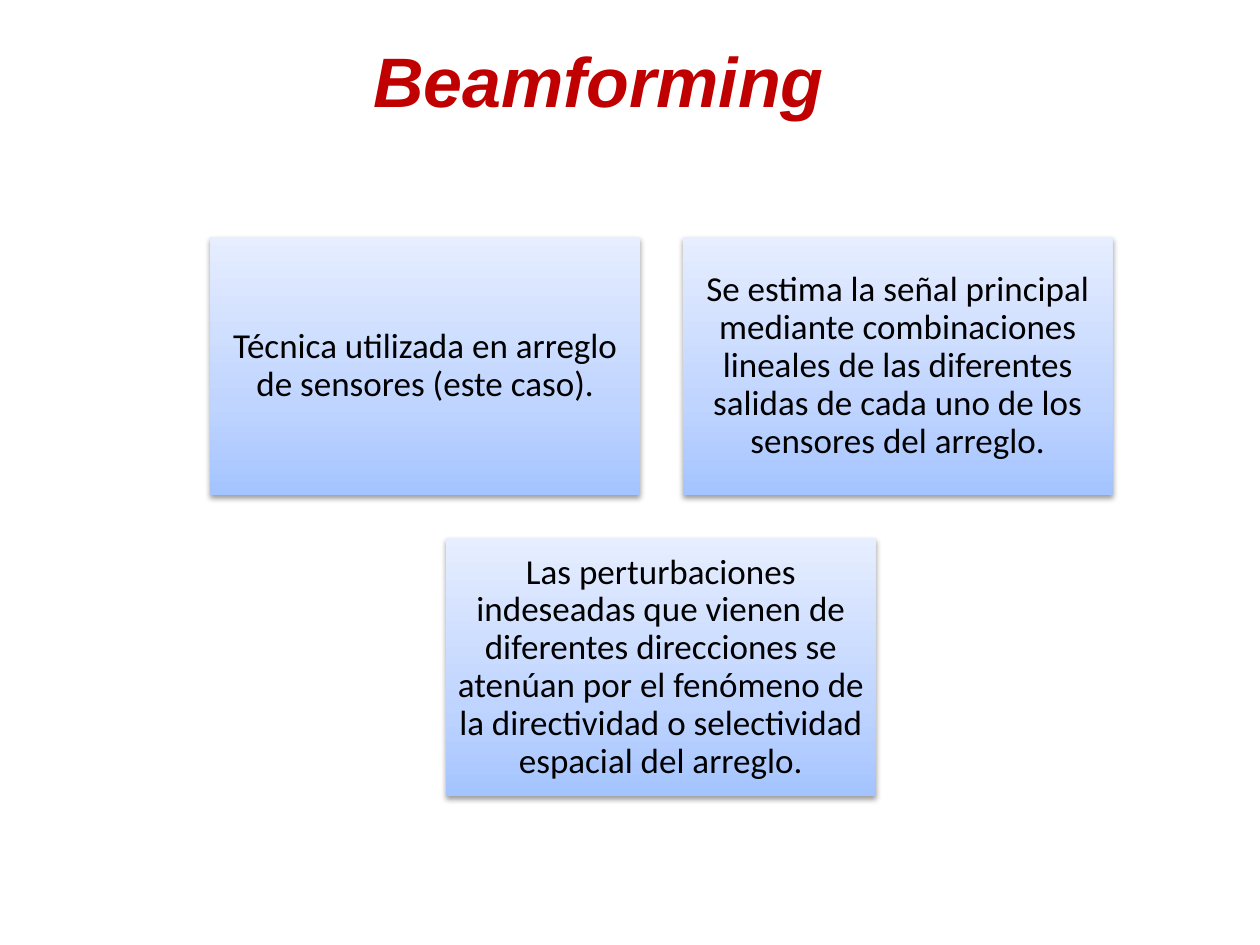
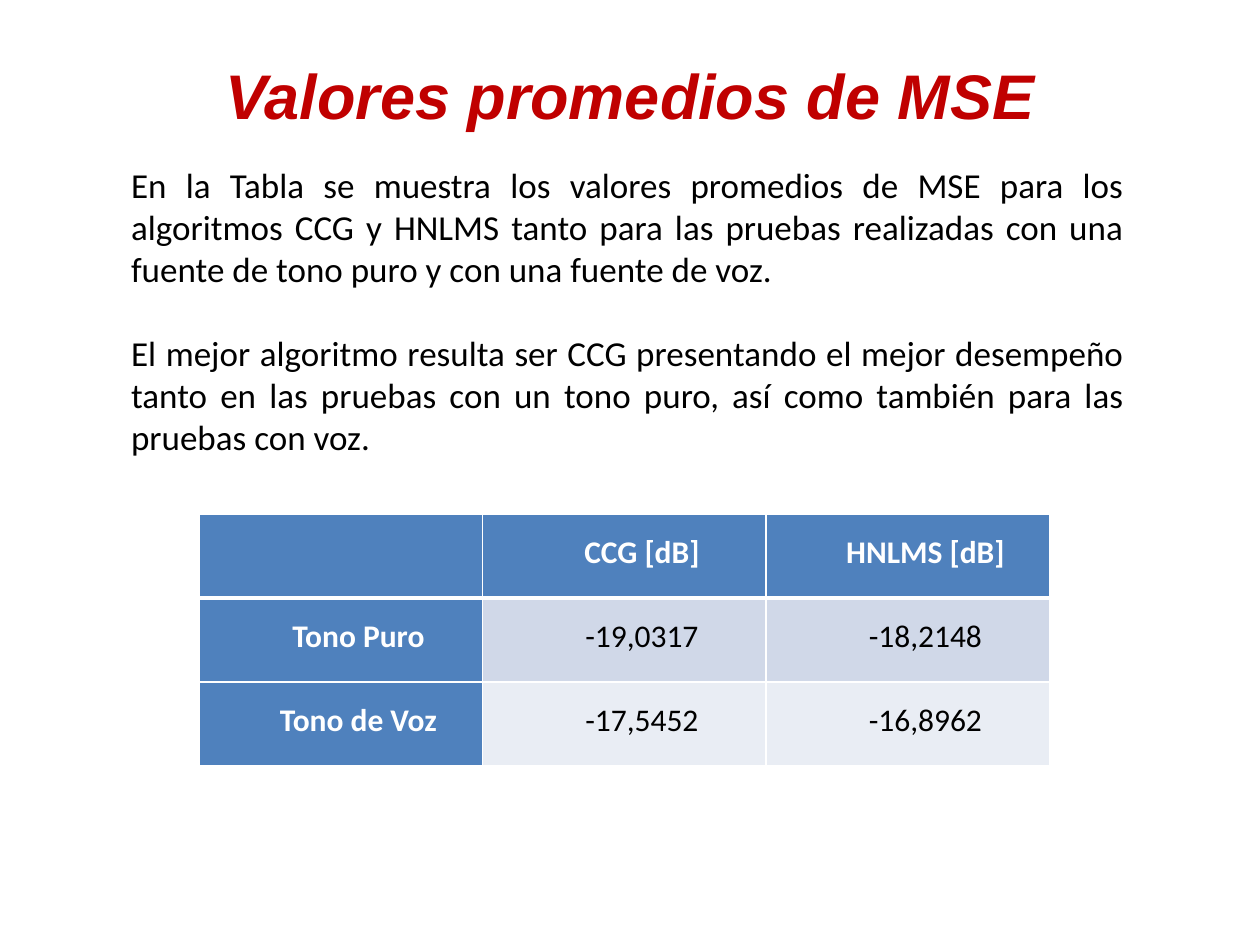
from dataclasses import dataclass
from typing import Any

from lxml import etree
from pptx import Presentation
from pptx import util as u
from pptx.dml.color import RGBColor
from pptx.enum import shapes, text
from pptx.oxml import ns

PX = 9144  # EMU in one px, 100 px to the inch

TITLE_RED = RGBColor(0xC0, 0x00, 0x00)
BLACK = RGBColor(0x00, 0x00, 0x00)
WHITE = RGBColor(0xFF, 0xFF, 0xFF)
HEADER_BLUE = RGBColor(0x4F, 0x81, 0xBD)
ROW_TINTS = (RGBColor(0xD0, 0xD8, 0xE8), RGBColor(0xE9, 0xED, 0xF4))
CARD_STOPS = (
    (0, RGBColor(0xA4, 0xC4, 0xFF)),
    (35, RGBColor(0xBF, 0xD4, 0xFF)),
    (100, RGBColor(0xE6, 0xEE, 0xFF)),
)
TITLE_FONT, BODY_FONT = "Arial", "Calibri"
TITLE_ONLY, TITLE_AND_CONTENT = 5, 1  # template layouts


@dataclass(frozen=True)
class Area:
    left: int
    top: int
    width: int
    height: int

    def emu(self) -> tuple[int, ...]:
        return tuple(px(n) for n in (self.left, self.top, self.width, self.height))


@dataclass(frozen=True)
class Card:
    message: str
    column: float
    row: int


CARD_WIDTH, CARD_HEIGHT, CARD_GAP = 341, 205, 34
CARDS_LEFT, CARDS_TOP = 167, 188
CARDS = (
    Card("Técnica utilizada en arreglo de sensores (este caso).", 0, 0),
    Card("Se estima la señal principal mediante combinaciones lineales de las "
         "diferentes salidas de cada uno de los sensores del arreglo.", 1, 0),
    Card("Las perturbaciones indeseadas que vienen de diferentes direcciones se "
         "atenúan por el fenómeno de la directividad o selectividad espacial del "
         "arreglo.", 0.5, 1),
)

FINDINGS = (
    "En la Tabla se muestra los valores promedios de MSE para los algoritmos CCG y "
    "HNLMS tanto para las pruebas realizadas con una fuente de tono puro y con una "
    "fuente de voz.",
    "El mejor algoritmo resulta ser CCG presentando el mejor desempeño tanto en las "
    "pruebas con un tono puro, así como también para las pruebas con voz.",
)
MSE_ROWS = (
    ("", "CCG [dB]", "HNLMS [dB]"),
    ("Tono Puro", "-19,0317", "-18,2148"),
    ("Tono de Voz", "-17,5452", "-16,8962"),
)


def px(length: float) -> int:
    return round(length * PX)


def write(frame: Any, *paragraphs: str, size: int, font: str = BODY_FONT,
          color: RGBColor = BLACK, bold: bool = False, italic: bool = False,
          align: Any = text.PP_ALIGN.CENTER, line: float = 1.0,
          gap: int = 0, first_indent: int = 0) -> None:
    """Fill a text frame with unbulleted paragraphs in one format."""
    for index, words in enumerate(paragraphs):
        paragraph = frame.add_paragraph() if index else frame.paragraphs[0]
        paragraph.alignment = align
        paragraph.line_spacing = line
        paragraph.space_before = u.Pt(gap if index else 0)
        properties = paragraph._p.get_or_add_pPr()
        properties.set("marL", "0")
        properties.set("indent", str(px(first_indent)))
        etree.SubElement(properties, ns.qn("a:buNone"))
        if not words:
            continue
        run = paragraph.add_run()
        run.text = words
        run.font.name, run.font.size = font, u.Pt(size)
        run.font.bold, run.font.italic = bold, italic
        run.font.color.rgb = color


def place(placeholder: Any, area: Area, anchor: Any) -> Any:
    """Move a placeholder and return its text frame."""
    placeholder.left, placeholder.top, placeholder.width, placeholder.height = area.emu()
    frame = placeholder.text_frame
    frame.word_wrap = True
    frame.auto_size = text.MSO_AUTO_SIZE.NONE
    frame.vertical_anchor = anchor
    return frame


def add_titled_slide(deck: Any, layout: int, title: str, area: Area, size: int) -> Any:
    slide = deck.slides.add_slide(deck.slide_layouts[layout])
    frame = place(slide.shapes.title, area, text.MSO_ANCHOR.MIDDLE)
    write(frame, title, size=size, font=TITLE_FONT, color=TITLE_RED,
          bold=True, italic=True)
    return slide


def add_color(parent: Any, color: RGBColor) -> Any:
    return etree.SubElement(parent, ns.qn("a:srgbClr"), val=str(color))


def add_card(slide: Any, card: Card) -> None:
    area = Area(round(CARDS_LEFT + card.column * (CARD_WIDTH + CARD_GAP)),
                CARDS_TOP + card.row * (CARD_HEIGHT + CARD_GAP),
                CARD_WIDTH, CARD_HEIGHT)
    box = slide.shapes.add_shape(shapes.MSO_SHAPE.RECTANGLE, *area.emu())
    box.line.fill.background()

    # Three-stop gradient, rising from the bottom edge
    box.fill.gradient()
    box.fill.gradient_angle = 90
    stops = box._element.spPr.find(".//" + ns.qn("a:gsLst"))
    stops.clear()
    for percent, color in CARD_STOPS:
        add_color(etree.SubElement(stops, ns.qn("a:gs"), pos=str(percent * 1000)), color)

    # Soft shadow below
    box.shadow.inherit = False
    effects = box._element.spPr.find(ns.qn("a:effectLst"))
    shadow = etree.SubElement(effects, ns.qn("a:outerShdw"), blurRad="40000",
                              dist="20000", dir="5400000", rotWithShape="0")
    etree.SubElement(add_color(shadow, BLACK), ns.qn("a:alpha"), val="38000")

    frame = box.text_frame
    frame.word_wrap = True
    frame.vertical_anchor = text.MSO_ANCHOR.MIDDLE
    frame.margin_left = frame.margin_right = px(8)
    frame.margin_top = frame.margin_bottom = px(8)
    write(frame, card.message, size=20, line=0.9)


def add_borders(cell: Any, top: int, bottom: int) -> None:
    properties = cell._tc.get_or_add_tcPr()
    for side, points in (("L", 1), ("R", 1), ("T", top), ("B", bottom)):
        border = etree.SubElement(properties, ns.qn(f"a:ln{side}"), w=str(u.Pt(points)))
        add_color(etree.SubElement(border, ns.qn("a:solidFill")), WHITE)


def add_mse_table(slide: Any, area: Area) -> None:
    table = slide.shapes.add_table(len(MSE_ROWS), len(MSE_ROWS[0]), *area.emu()).table
    table.first_col = True
    for row, values in enumerate(MSE_ROWS):
        for column, value in enumerate(values):
            cell = table.cell(row, column)
            heading = row == 0 or column == 0
            cell.margin_left = cell.margin_right = px(7)
            cell.margin_top = cell.margin_bottom = 0
            add_borders(cell, top=3 if row == 1 else 1, bottom=3 if row == 0 else 1)
            cell.fill.solid()
            cell.fill.fore_color.rgb = HEADER_BLUE if heading else ROW_TINTS[row - 1]
            write(cell.text_frame, value, size=18, bold=heading,
                  color=WHITE if heading else BLACK, line=1.5, first_indent=28)


def main() -> None:
    deck = Presentation()
    deck.slide_width, deck.slide_height = px(1000), px(750)

    # Slide 1: beamforming in three cards
    beamforming = add_titled_slide(deck, TITLE_ONLY, "Beamforming",
                                   Area(10, 25, 930, 77), 40)
    for card in CARDS:
        add_card(beamforming, card)

    # Slide 2: average MSE values
    averages = add_titled_slide(deck, TITLE_AND_CONTENT, "Valores promedios de MSE",
                                Area(75, 25, 850, 100), 36)
    findings = place(averages.placeholders[1], Area(94, 125, 808, 246),
                     text.MSO_ANCHOR.TOP)
    write(findings, *FINDINGS, size=20, align=text.PP_ALIGN.JUSTIFY, gap=24)
    add_mse_table(averages, Area(158, 408, 675, 200))

    deck.save("out.pptx")


if __name__ == "__main__":
    main()
